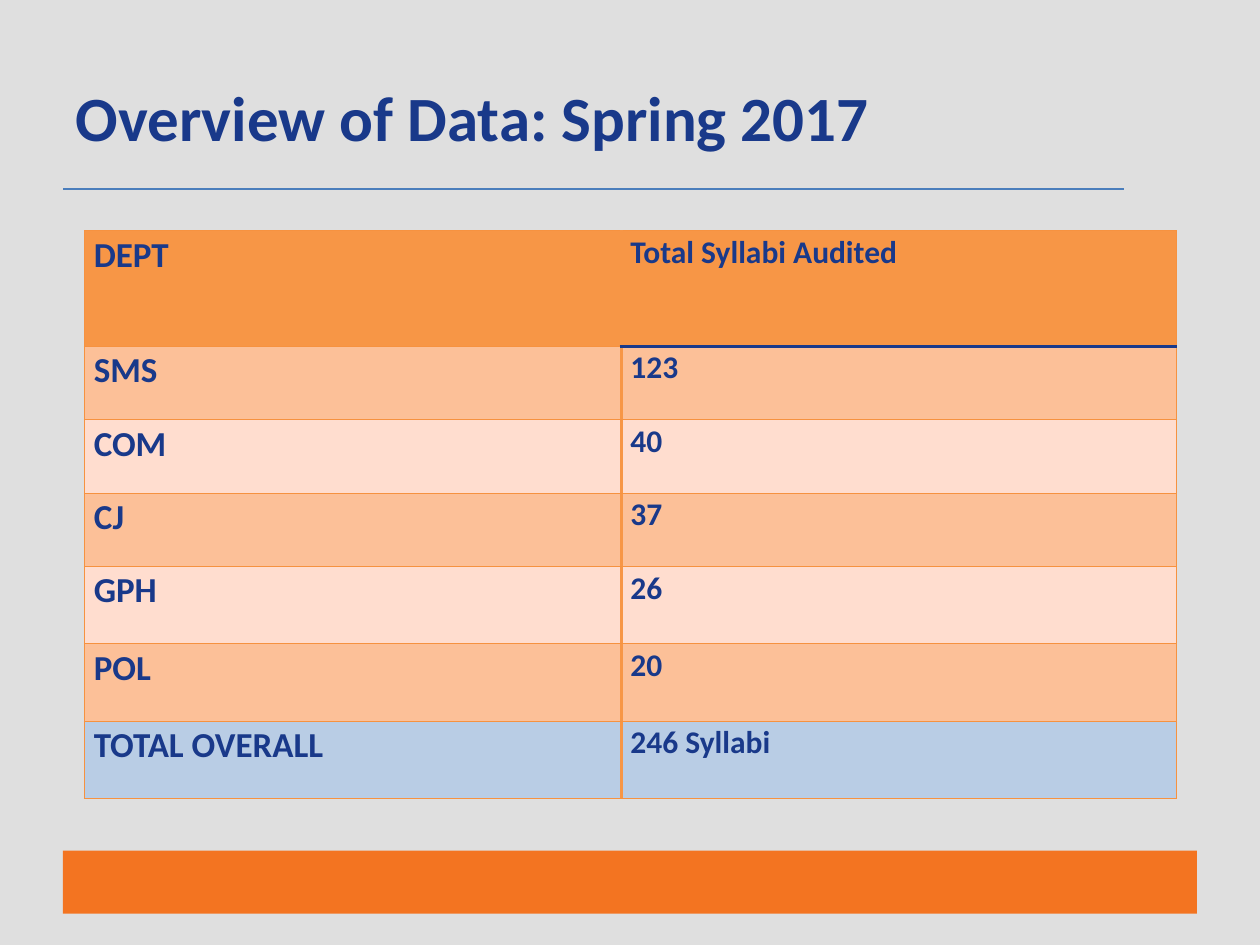
import pptx
import pptx.util
import pptx.dml.color
import pptx.enum.shapes
import pptx.enum.text
import pptx.oxml
import pptx.oxml.ns
import lxml.etree

Cm, Pt = pptx.util.Cm, pptx.util.Pt
RGB = pptx.dml.color.RGBColor.from_string
qn = pptx.oxml.ns.qn

HUES = {
    "page": "DFDFDF", "bar": "F37421", "text": "19398A", "rule": "4B7EBC",
    "head": "F79646", "band": "FCC098", "pale": "FFDDCF", "total": "B9CDE5",
    "edge": "F69240",
}
ROWS = [
    ("DEPT", "Total Syllabi Audited", 2.33, "head"),
    ("SMS", "123", 1.48, "band"),
    ("COM", "40", 1.48, "pale"),
    ("CJ", "37", 1.48, "band"),
    ("GPH", "26", 1.56, "pale"),
    ("POL", "20", 1.56, "band"),
    ("TOTAL OVERALL", "246 Syllabi", 1.56, "total"),
]
COLS = [(10.82, 20), (11.2, 18)]  # width, text size
INSETS = {"margin_left": Cm(0.19), "margin_right": Cm(0.19),
          "margin_top": 0, "margin_bottom": 0}


def style(para, size):
    look = {"name": "Calibri", "size": Pt(size), "bold": True}
    for key, val in look.items():
        setattr(para.font, key, val)
    para.font.color.rgb = RGB(HUES["text"])


def border(cell, side, hue, width):
    line = lxml.etree.SubElement(cell._tc.get_or_add_tcPr(), qn("a:ln" + side),
                                 w=str(Pt(width)))
    fill = lxml.etree.SubElement(line, qn("a:solidFill"))
    lxml.etree.SubElement(fill, qn("a:srgbClr"), val=HUES[hue])


deck = pptx.Presentation()
deck.slide_width, deck.slide_height = Cm(25.4), Cm(19.05)
slide = deck.slides.add_slide(deck.slide_layouts[5])
slide.background.fill.solid()
slide.background.fill.fore_color.rgb = RGB(HUES["page"])

# Title
title = slide.shapes.title
place = {"left": Cm(1.27), "top": Cm(0.76), "width": Cm(22.86), "height": Cm(3.18)}
for key, val in place.items():
    setattr(title, key, val)
title.text_frame.text = "Overview of Data: Spring 2017"
title.text_frame.vertical_anchor = pptx.enum.text.MSO_ANCHOR.MIDDLE
para = title.text_frame.paragraphs[0]
para.alignment = pptx.enum.text.PP_ALIGN.LEFT
style(para, 36)

# Rule under the title
rule = slide.shapes.add_connector(pptx.enum.shapes.MSO_CONNECTOR.STRAIGHT,
                                  Cm(1.27), Cm(3.81), Cm(22.65), Cm(3.81))
rule.line.color.rgb = RGB(HUES["rule"])
rule.line.width = Pt(0.75)
lxml.etree.SubElement(rule._element.spPr, qn("a:effectLst"))

# Bar at the foot
bar = slide.shapes.add_shape(pptx.enum.shapes.MSO_SHAPE.RECTANGLE,
                             Cm(1.27), Cm(17.15), Cm(22.86), Cm(1.27))
bar.shadow.inherit = False
bar.fill.solid()
bar.fill.fore_color.rgb = RGB(HUES["bar"])
bar.line.fill.background()

# Table of audited syllabi
wide = sum(col[0] for col in COLS)
tall = sum(row[2] for row in ROWS)
table = slide.shapes.add_table(len(ROWS), len(COLS), Cm(1.7), Cm(4.65),
                               Cm(wide), Cm(tall)).table
table.horz_banding = False
for c, (width, size) in enumerate(COLS):
    table.columns[c].width = Cm(width)
for r, (dept, count, high, hue) in enumerate(ROWS):
    table.rows[r].height = Cm(high)
    for c, text in enumerate((dept, count)):
        cell = table.cell(r, c)
        for key, val in INSETS.items():
            setattr(cell, key, val)
        cell.text = text
        para = cell.text_frame.paragraphs[0]
        para.line_spacing = 1.07
        style(para, COLS[c][1])

        # The column divider is thick; a navy line closes the right heading
        mid = ("head", 2)
        thin = ("edge", 0.75)
        navy = ("text", 2)
        border(cell, "L", *(mid if c == 1 else thin))
        border(cell, "R", *(mid if c == 0 else thin))
        border(cell, "T", *(navy if (r, c) == (1, 1) else thin))
        border(cell, "B", *(navy if (r, c) == (0, 1) else thin))
        cell.fill.solid()
        cell.fill.fore_color.rgb = RGB(HUES[hue])

deck.save("out.pptx")
